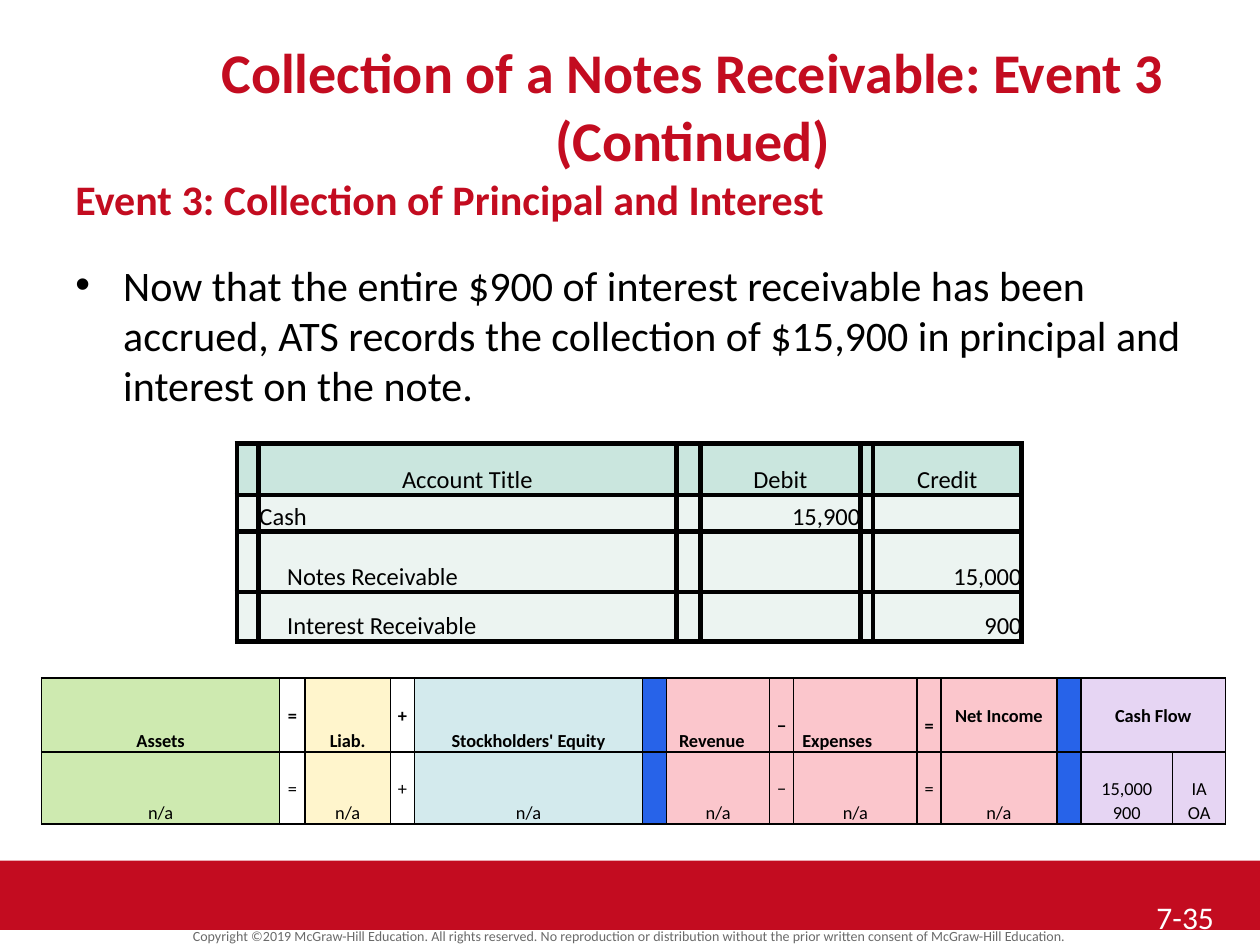
from dataclasses import dataclass

from lxml.etree import SubElement
from pptx import Presentation
from pptx.dml.color import RGBColor
from pptx.enum.shapes import MSO_SHAPE as Shape
from pptx.enum.text import MSO_ANCHOR as Anchor, PP_ALIGN as Align
from pptx.oxml.ns import qn
from pptx.util import Inches, Pt

# The slide is a grid of 100 columns by 75 rows of square units.
COLUMNS, ROWS = 100, 75
UNIT = Inches(10) / COLUMNS
RED, BLACK, WHITE, GREY = "C30C20", "000000", "FFFFFF", "6A6A6A"
MINT, PALE_MINT = "CAE6DE", "ECF4F1"
GREEN, YELLOW, TEAL = "CEEAB0", "FFF5CC", "D3EAED"
BLUE, PINK, LILAC = "2763E9", "FBC6CC", "E6D5F3"


@dataclass
class Box:
    left: float
    top: float
    width: float
    height: float

    def emu(self) -> tuple:
        return tuple(units(n) for n in (self.left, self.top, self.width, self.height))


@dataclass
class Entry:
    """A table cell: wording, fill and placement; insets in grid units."""
    text: str = ""
    fill: str | None = None
    align: Align = Align.CENTER
    anchor: Anchor = Anchor.BOTTOM
    bold: bool = False
    inset: float = 0
    drop: float = 0
    span: int = 1


@dataclass
class Grid:
    left: float
    top: float
    widths: list
    heights: list
    size: float
    border: float
    spacing: float = 1.0


def units(count: float) -> int:
    return round(count * UNIT)


def colour(hex_code: str) -> RGBColor:
    return RGBColor.from_string(hex_code)


def write(frame, text, *, size, fill=BLACK, bold=False, align=Align.LEFT,
          spacing=None, before=0, after=0, bullet=None, append=False):
    """Put each line of text in its own paragraph."""
    frame.word_wrap = True
    for index, line in enumerate(text.split("\n")):
        fresh = append or index > 0
        paragraph = frame.add_paragraph() if fresh else frame.paragraphs[0]
        paragraph.alignment = align
        paragraph.line_spacing = spacing
        paragraph.space_before, paragraph.space_after = Pt(before), Pt(after)
        if bullet:
            properties = paragraph._p.get_or_add_pPr()
            indent = units(3.8)
            properties.set("marL", str(indent))
            properties.set("indent", str(-indent))
            SubElement(properties, qn("a:buFont"), typeface="Arial")
            SubElement(properties, qn("a:buChar"), char=bullet)
        if not line:
            SubElement(paragraph._p, qn("a:endParaRPr"), sz=str(int(size * 100)))
            continue
        run = paragraph.add_run()
        run.text = line
        font = run.font
        font.name, font.size, font.bold = "Calibri", Pt(size), bold
        font.color.rgb = colour(fill)


def add_text(slide, box: Box, text: str, **style):
    frame = slide.shapes.add_textbox(*box.emu()).text_frame
    write(frame, text, **style)
    return frame


def outline(cell, width: float) -> None:
    properties = cell._tc.get_or_add_tcPr()
    for side in ("a:lnL", "a:lnR", "a:lnT", "a:lnB"):
        line = SubElement(properties, qn(side), w=str(Pt(width)))
        solid = SubElement(line, qn("a:solidFill"))
        SubElement(solid, qn("a:srgbClr"), val=BLACK)


def draw_entry(cell, entry: Entry, grid: Grid) -> None:
    outline(cell, grid.border)
    if entry.fill:
        cell.fill.solid()
        cell.fill.fore_color.rgb = colour(entry.fill)
    else:
        cell.fill.background()
    cell.margin_left = units(entry.inset)
    cell.margin_right = cell.margin_bottom = 0
    cell.margin_top = units(entry.drop)
    cell.vertical_anchor = entry.anchor
    write(cell.text_frame, entry.text, size=grid.size, bold=entry.bold,
          align=entry.align, spacing=grid.spacing)


def draw_table(slide, grid: Grid, rows: list) -> None:
    box = Box(grid.left, grid.top, sum(grid.widths), sum(grid.heights))
    table = slide.shapes.add_table(len(rows), len(grid.widths), *box.emu()).table
    table.first_row = table.horz_banding = False
    for column, width in zip(table.columns, grid.widths):
        column.width = units(width)
    for row, height in zip(table.rows, grid.heights):
        row.height = units(height)
    for r, entries in enumerate(rows):
        c = 0
        for entry in entries:
            for covered in range(c, c + entry.span):
                shown = entry if covered == c else Entry(fill=entry.fill)
                draw_entry(table.cell(r, covered), shown, grid)
            if entry.span > 1:
                table.cell(r, c).merge(table.cell(r, c + entry.span - 1))
            c += entry.span


def journal_row(account: str, debit: str, credit: str, indent: float) -> list:
    gap = Entry(fill=PALE_MINT)
    return [gap, Entry(account, PALE_MINT, Align.LEFT, inset=indent),
            gap, Entry(debit, PALE_MINT, Align.RIGHT),
            gap, Entry(credit, PALE_MINT, Align.RIGHT)]


def sign(text: str, fill: str | None = None, bold=False, drop=0.0) -> Entry:
    return Entry(text, fill, anchor=Anchor.MIDDLE, bold=bold, drop=drop)


def draw_journal(slide) -> None:
    gap = Entry(fill=MINT)
    header = [part for title in ("Account Title", "Debit", "Credit")
              for part in (gap, Entry(title, MINT))]
    grid = Grid(18.8, 35.2, [1.7, 33.2, 1.9, 12.7, 1, 11.8],
                [4.1, 2.9, 4.8, 3.9], size=14, border=3)
    draw_table(slide, grid, [
        header,
        journal_row("Cash", "15,900", "", 0.1),
        journal_row("Notes Receivable", "", "15,000", 2.3),
        journal_row("Interest Receivable", "", "900", 2.3),
    ])


def draw_statements_model(slide) -> None:
    divider = Entry(fill=BLUE)
    headings = [
        Entry("Assets", GREEN, bold=True), sign("=", bold=True),
        Entry("Liab.", YELLOW, bold=True), sign("+", bold=True),
        Entry("Stockholders' Equity", TEAL, bold=True), divider,
        Entry("Revenue", PINK, Align.LEFT, bold=True, inset=1),
        sign("−", PINK, True, 1.6),
        Entry("Expenses", PINK, Align.LEFT, bold=True, inset=0.7),
        sign("=", PINK, True, 1.6),
        sign("Net Income", PINK, True), divider,
        Entry("Cash Flow", LILAC, anchor=Anchor.MIDDLE, bold=True, span=2),
    ]
    effects = [
        Entry("n/a", GREEN), sign("="), Entry("n/a", YELLOW), sign("+"),
        Entry("n/a", TEAL), divider, Entry("n/a", PINK), sign("−", PINK),
        Entry("n/a", PINK), sign("=", PINK), Entry("n/a", PINK), divider,
        Entry("15,000\n900", LILAC), Entry("IA\nOA", LILAC),
    ]
    widths = [18.9, 2, 6.8, 1.9, 18.1, 1.9, 8.2, 1.9, 9.8, 1.9, 9.2, 1.9, 7.3, 4.2]
    grid = Grid(3.3, 53.8, widths, [5.9, 5.7], size=10.5, border=1, spacing=1.07)
    draw_table(slide, grid, [headings, effects])


def main() -> None:
    deck = Presentation()
    deck.slide_width, deck.slide_height = units(COLUMNS), units(ROWS)
    slide = deck.slides.add_slide(deck.slide_layouts[5])

    band = slide.shapes.add_shape(Shape.RECTANGLE, *Box(0, 68.3, COLUMNS, 5.5).emu())
    band.shadow.inherit = False
    band.fill.solid()
    band.fill.fore_color.rgb = colour(RED)
    band.line.fill.background()
    add_text(slide, Box(0, 73.4, COLUMNS, 1.9),
             "Copyright ©2019 McGraw-Hill Education. All rights reserved. No reproduction "
             "or distribution without the prior written consent of McGraw-Hill Education.",
             size=8, fill=GREY, align=Align.CENTER, spacing=0.8)

    title = slide.shapes.title
    title.left, title.top, title.width, title.height = Box(10, 2.5, 90, 6.7).emu()
    title.text_frame.vertical_anchor = Anchor.TOP
    write(title.text_frame, "Collection of a Notes Receivable: Event 3 (Continued)",
          size=32, fill=RED, bold=True, align=Align.CENTER)

    body = add_text(slide, Box(5, 13.3, 90, 51.7),
                    "Event 3: Collection of Principal and Interest",
                    size=24, fill=RED, bold=True, after=8)
    write(body, "Now that the entire $900 of interest receivable has been accrued, ATS "
          "records the collection of $15,900 in principal and interest on the note.",
          size=24, before=12, after=8, bullet="•", append=True)

    add_text(slide, Box(90.8, 70.8, 9.2, 4.2), "7-35", size=18, fill=WHITE)
    draw_journal(slide)
    draw_statements_model(slide)
    deck.save("out.pptx")


if __name__ == "__main__":
    main()
